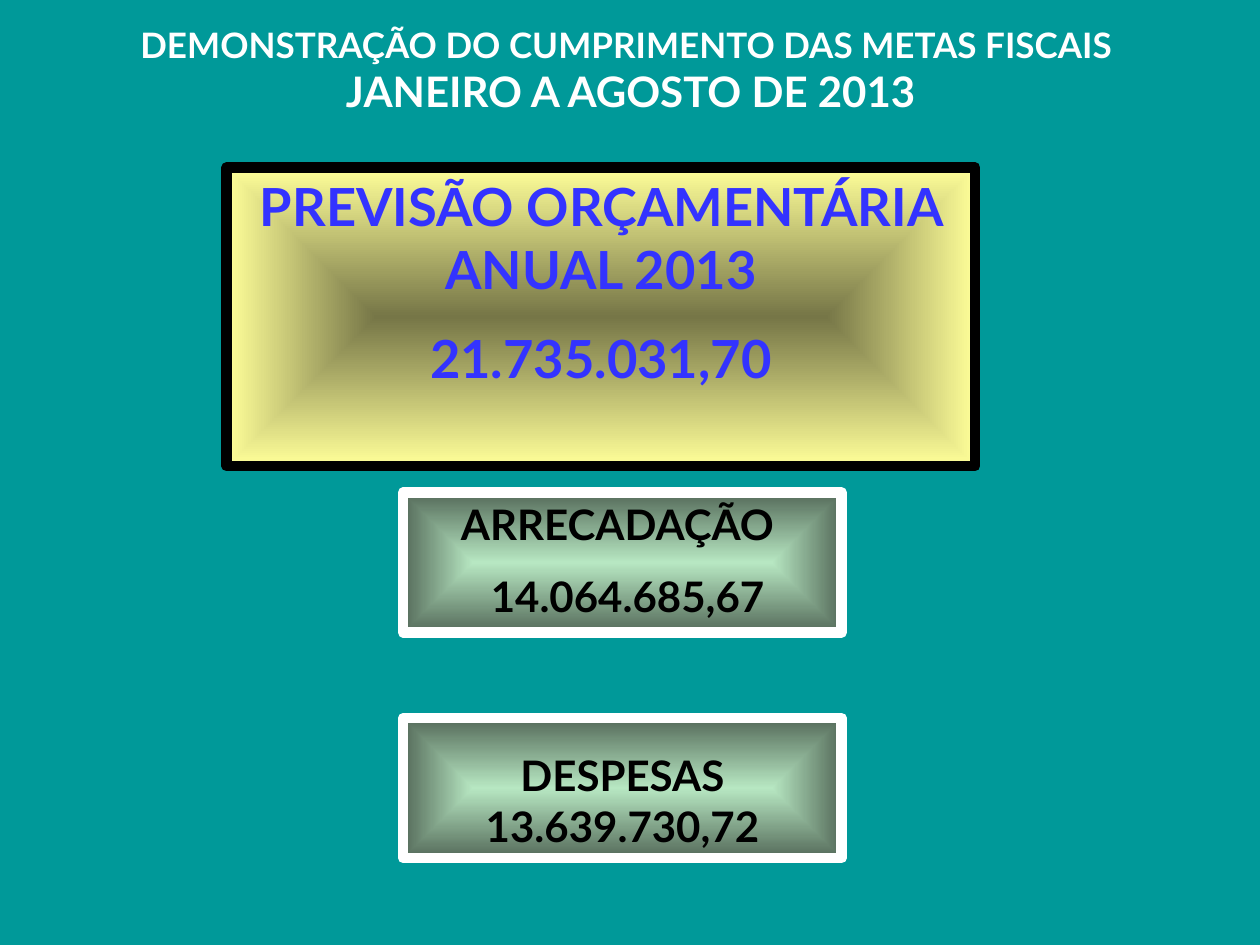
from dataclasses import dataclass

from lxml import etree
from pptx import Presentation
from pptx import util as u
from pptx.dml.color import RGBColor
from pptx.enum import shapes, text
from pptx.oxml.ns import qn

HUES = {
    "back": "009999", "white": "FFFFFF", "black": "000000", "blue": "3333FF",
    "olive": "767647", "cream": "FFFF99", "mint": "B7E7C2", "moss": "556B5A",
}
FONT = "Lato"


@dataclass
class Panel:
    """A framed box with a gradient from its centre to its edge."""
    top: float
    lines: list[str]
    left: float = 230.4
    width: float = 250.56
    height: float = 79.92
    size: float = 24
    ink: str = "black"
    frame: str = "white"
    core: str = "mint"
    edge: str = "moss"
    before: float = 12
    lead: float = 1


PANELS = [
    Panel(95.76, ["PREVISÃO ORÇAMENTÁRIA ANUAL 2013", "21.735.031,70"], left=129.6,
          width=427.68, height=170.64, size=30, ink="blue", frame="black",
          core="olive", edge="cream", before=15),
    Panel(281.52, ["ARRECADAÇÃO ", " 14.064.685,67"]),
    Panel(410.4, ["DESPESAS", "13.639.730,72"], before=0, lead=1.5),
]


def tint(name: str) -> RGBColor:
    """Return the named colour."""
    return RGBColor.from_string(HUES[name])


def write(para, words: str, size: float, ink: str) -> None:
    """Add one bold run to a centred paragraph."""
    para.alignment = text.PP_ALIGN.CENTER
    run = para.add_run()
    run.text = words
    font = run.font
    font.name, font.size, font.bold = FONT, u.Pt(size), True
    font.color.rgb = tint(ink)


def shade(shape, core: str, edge: str) -> None:
    """Fill a shape with a gradient that follows its outline."""
    shape.fill.gradient()
    for stop, name, place in zip(shape.fill.gradient_stops, (core, edge), (0, 1)):
        stop.color.rgb, stop.position = tint(name), place
    grad = shape._element.spPr.find(qn("a:gradFill"))
    grad.remove(grad.find(qn("a:lin")))
    route = etree.SubElement(grad, qn("a:path"), path="shape")
    etree.SubElement(route, qn("a:fillToRect"), dict.fromkeys("ltrb", "50000"))


def draw_panel(slide, panel: Panel) -> None:
    """Draw a framed panel and its lines of text."""
    box = slide.shapes.add_shape(
        shapes.MSO_SHAPE.RECTANGLE, u.Pt(panel.left), u.Pt(panel.top),
        u.Pt(panel.width), u.Pt(panel.height))
    box.shadow.inherit = False
    shade(box, panel.core, panel.edge)
    box.line.color.rgb = tint(panel.frame)
    box.line.width = u.Pt(6)
    frame = box.text_frame
    frame.word_wrap = True
    frame.vertical_anchor = text.MSO_ANCHOR.TOP
    for i, words in enumerate(panel.lines):
        para = frame.add_paragraph() if i else frame.paragraphs[0]
        if i:
            para.space_before = u.Pt(panel.before)
        else:
            para.line_spacing = panel.lead
        write(para, words, panel.size, panel.ink)


def draw_title(slide) -> None:
    """Draw the two-line heading."""
    box = slide.shapes.add_textbox(u.Pt(14.4), u.Pt(9.36), u.Pt(691.92), u.Pt(89.28))
    frame = box.text_frame
    frame.word_wrap = True
    frame.vertical_anchor = text.MSO_ANCHOR.BOTTOM
    frame.margin_bottom = u.Pt(32.4)
    para = frame.paragraphs[0]
    write(para, "DEMONSTRAÇÃO DO CUMPRIMENTO DAS METAS FISCAIS ", 20, "white")
    para.add_line_break()
    write(para, "JANEIRO A AGOSTO DE 2013", 24, "white")


def main() -> None:
    """Build and save the slide."""
    deck = Presentation()
    deck.slide_width, deck.slide_height = u.Pt(720), u.Pt(540)
    slide = deck.slides.add_slide(deck.slide_layouts[6])
    slide.background.fill.solid()
    slide.background.fill.fore_color.rgb = tint("back")
    draw_title(slide)
    for panel in PANELS:
        draw_panel(slide, panel)
    deck.save("out.pptx")


if __name__ == "__main__":
    main()
